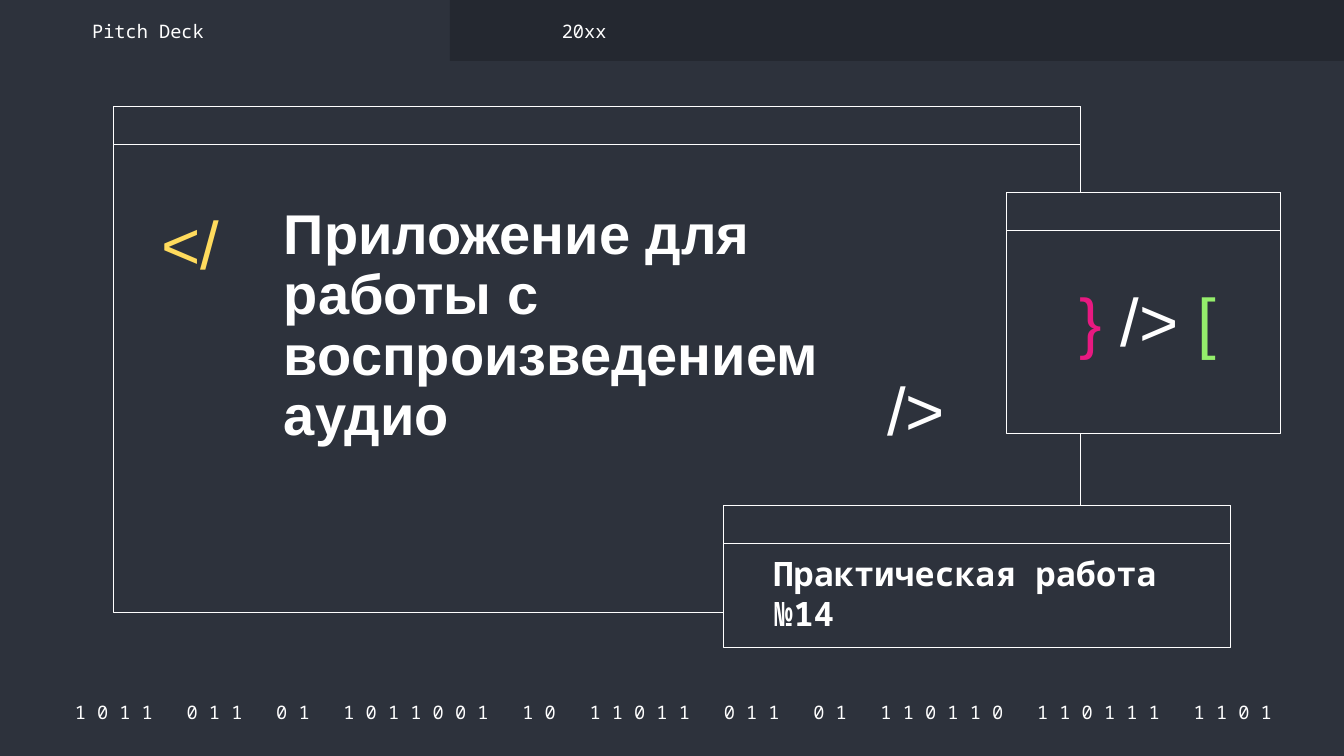
from dataclasses import dataclass

from pptx import Presentation
from pptx.dml.color import RGBColor
from pptx.enum.shapes import MSO_SHAPE as Preset
from pptx.enum.text import MSO_ANCHOR as Anchor, MSO_AUTO_SIZE as AutoSize, PP_ALIGN as Align
from pptx.shapes.base import BaseShape
from pptx.slide import Slide
from pptx.util import Pt

COLOURS = {
    "background": "2D323C",
    "tab_bar": "242830",
    "white": "FFFFFF",
    "yellow": "FFDB5D",
    "pink": "E81981",
    "green": "94EE6B",
}
SANS, MONO = "Arial", "Noto Sans Mono"
STRIP_HEIGHT = 27
INSET = 9.6
BINARY = "1011 011 01 1011001 10 11011 011 01 110110 110111 1101"


@dataclass(frozen=True)
class Box:
    left: float
    top: float
    width: float
    height: float

    def lengths(self) -> tuple[Pt, Pt, Pt, Pt]:
        return Pt(self.left), Pt(self.top), Pt(self.width), Pt(self.height)


@dataclass(frozen=True)
class Run:
    text: str
    colour: str = "white"
    spacing: float = 0


@dataclass(frozen=True)
class Label:
    box: Box
    runs: tuple[Run, ...]
    size: float
    font: str = MONO
    bold: bool = False
    align: Align = Align.LEFT
    anchor: Anchor = Anchor.MIDDLE
    line_spacing: float = 1.0


def binary_runs() -> tuple[Run, ...]:
    """Spread the digits of each group and widen the space between groups."""
    runs: list[Run] = []
    for group in BINARY.split():
        if runs:
            runs.append(Run(" ", spacing=16))
        runs.append(Run(" ".join(group)))
    return tuple(runs)


TAB_BAR = Box(321.3, 0, 638.7, 43.5)
WINDOWS = (
    Box(81.1, 76.2, 690.6, 361),
    Box(517, 361.2, 362, 101.2),
    Box(719, 137.4, 195.8, 172),
)
TITLE = Label(
    Box(193.2, 137.4, 450.7, 176.4),
    (Run("Приложение для работы с воспроизведением аудио"),),
    40, SANS, bold=True, anchor=Anchor.TOP, line_spacing=0.9,
)
LABELS = (
    Label(Box(36, 499, 890, 19), binary_runs(), 13.3, align=Align.CENTER),
    Label(Box(105.8, 145.4, 73.4, 63.4), (Run("</", "yellow"),), 48, SANS, line_spacing=0.9),
    Label(Box(624.2, 263.5, 73.4, 63.4), (Run("/>"),), 48, SANS, line_spacing=0.9),
    Label(
        Box(756, 196.6, 127.4, 78.5),
        (Run("}", "pink"), Run(" /> "), Run("[", "green")),
        48, SANS, align=Align.CENTER, anchor=Anchor.TOP, line_spacing=0.9,
    ),
    Label(Box(542.9, 396, 336.2, 55.4), (Run("Практическая работа №14"),), 24, bold=True),
    Label(Box(56.2, 12.4, 210, 19), (Run("Pitch Deck"),), 13.3),
    Label(Box(391.7, 12.4, 210, 19), (Run("20xx"),), 13.3),
)


def colour_of(name: str) -> RGBColor:
    """Look up a named colour."""
    return RGBColor.from_string(COLOURS[name])


def apply_format(target: object, values: dict[str, object]) -> None:
    """Set each named attribute of the target."""
    for name, value in values.items():
        setattr(target, name, value)


def add_panel(slide: Slide, box: Box, fill: str, outline: str | None = None) -> None:
    """Draw a filled rectangle, outlined if a colour is given."""
    shape = slide.shapes.add_shape(Preset.RECTANGLE, *box.lengths())
    shape.shadow.inherit = False
    shape.fill.solid()
    shape.fill.fore_color.rgb = colour_of(fill)
    if outline is None:
        shape.line.fill.background()
    else:
        shape.line.color.rgb = colour_of(outline)
        shape.line.width = Pt(0.75)


def add_window(slide: Slide, box: Box) -> None:
    """Draw a window with its title strip."""
    strip = Box(box.left, box.top, box.width, STRIP_HEIGHT)
    for part in (box, strip):
        add_panel(slide, part, "background", "white")


def write_label(shape: BaseShape, label: Label) -> None:
    """Place a text shape and fill it with formatted runs."""
    apply_format(shape, dict(zip(("left", "top", "width", "height"), label.box.lengths())))
    frame = shape.text_frame
    margins = ("margin_left", "margin_top", "margin_right", "margin_bottom")
    apply_format(frame, {
        "word_wrap": True,
        "auto_size": AutoSize.NONE,
        "vertical_anchor": label.anchor,
        **dict.fromkeys(margins, Pt(INSET)),
    })
    paragraph = frame.paragraphs[0]
    apply_format(paragraph, {
        "alignment": label.align,
        "line_spacing": label.line_spacing,
        "space_before": Pt(0),
    })
    for item in label.runs:
        run = paragraph.add_run()
        run.text = item.text
        apply_format(run.font, {"name": label.font, "size": Pt(label.size), "bold": label.bold})
        run.font.color.rgb = colour_of(item.colour)
        if item.spacing:
            run.font._element.set("spc", str(round(item.spacing * 100)))


def main() -> None:
    """Build the cover slide and save it."""
    presentation = Presentation()
    apply_format(presentation, {"slide_width": Pt(960), "slide_height": Pt(540)})
    slide = presentation.slides.add_slide(presentation.slide_layouts.get_by_name("Title Only"))
    slide.background.fill.solid()
    slide.background.fill.fore_color.rgb = colour_of("background")

    add_panel(slide, TAB_BAR, "tab_bar")
    for window in WINDOWS:
        add_window(slide, window)

    title = slide.shapes.title
    slide.shapes._spTree.append(title._element)
    write_label(title, TITLE)
    for label in LABELS:
        write_label(slide.shapes.add_textbox(*label.box.lengths()), label)

    presentation.save("out.pptx")


if __name__ == "__main__":
    main()
